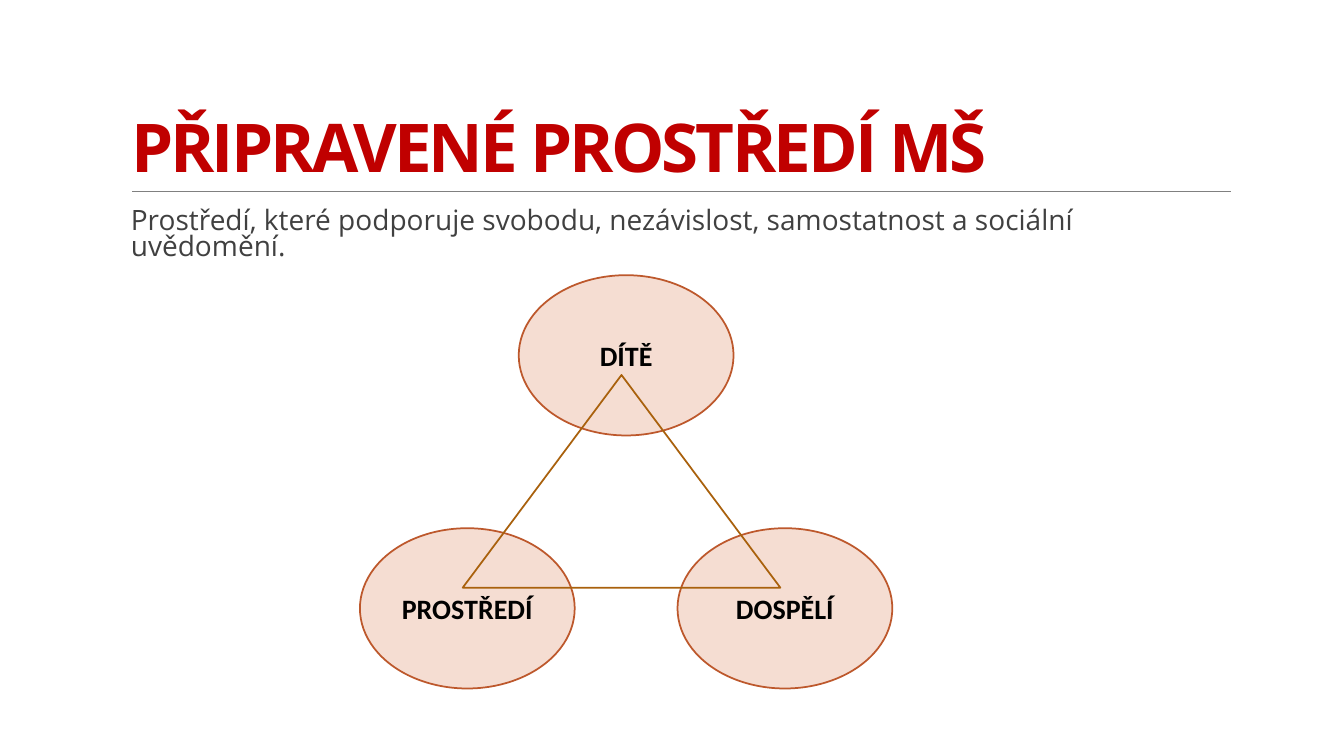
from dataclasses import dataclass

from pptx import Presentation
from pptx.dml.color import RGBColor
from pptx.enum.shapes import MSO_CONNECTOR as Link, MSO_SHAPE as Form
from pptx.enum.text import MSO_ANCHOR as Anchor, MSO_AUTO_SIZE as Fit, PP_ALIGN as Align
from pptx.oxml.ns import qn
from pptx.shapes.autoshape import Shape
from pptx.slide import Slide
from pptx.util import Inches, Pt

WIDTH, HEIGHT = Inches(13.33), Inches(7.5)
RED = RGBColor(0xC0, 0x00, 0x00)
GRAY = RGBColor(0x40, 0x40, 0x40)
RULE = RGBColor(0x80, 0x80, 0x80)
PEACH = RGBColor(0xF5, 0xDD, 0xD2)
RUST = RGBColor(0xBD, 0x58, 0x2C)
BROWN = RGBColor(0xA9, 0x61, 0x0D)
BLACK = RGBColor(0x00, 0x00, 0x00)


@dataclass(frozen=True)
class Area:
    left: float
    top: float
    width: float
    height: float

    def box(self) -> tuple[int, int, int, int]:
        return (col(self.left), row(self.top), col(self.width), row(self.height))


@dataclass(frozen=True)
class Node:
    label: str
    step: float
    level: int


TITLE = Area(9, 4.13, 82.52, 21.2)
BODY = Area(9, 26.93, 82.52, 58.67)
OVAL = Area(26.78, 36.4, 15.98, 21.2)
PEAK = Area(34.43, 49.6, 23.63, 28.13)
DROP = 33.47
NODES = (Node("PROSTŘEDÍ", 0, 1), Node("DOSPĚLÍ", 1, 1), Node("DÍTĚ", 0.5, 0))


def col(share: float) -> int:
    return round(WIDTH * share / 100)


def row(share: float) -> int:
    return round(HEIGHT * share / 100)


def write(shape: Shape, text: str, face: str, size: int, color: RGBColor,
          bold: bool, align: Align, anchor: Anchor) -> None:
    frame = shape.text_frame
    frame.word_wrap = True
    frame.auto_size = Fit.NONE
    frame.vertical_anchor = anchor
    frame.text = text
    para = frame.paragraphs[0]
    para.alignment = align
    font = para.font
    font.name, font.size, font.bold = face, Pt(size), bold
    font.color.rgb = color


def add_title(slide: Slide) -> None:
    title = slide.shapes.title
    title.left, title.top, title.width, title.height = TITLE.box()
    write(title, "PŘIPRAVENÉ PROSTŘEDÍ MŠ", "Open Sans", 48, RED, True, Align.LEFT, Anchor.BOTTOM)
    para = title.text_frame.paragraphs[0]
    para.line_spacing = 0.85
    para.runs[0].font._element.set("spc", "-200")


def add_rule(slide: Slide) -> None:
    level = row(25.33)
    rule = slide.shapes.add_connector(Link.STRAIGHT, col(9.83), level, col(91.6), level)
    rule.line.color.rgb = RULE
    rule.line.width = Pt(0.5)
    props = rule._element.spPr
    props.append(props.makeelement(qn("a:effectLst"), {}))


def add_body(slide: Slide) -> None:
    body = slide.shapes.add_textbox(*BODY.box())
    text = "Prostředí, které podporuje svobodu, nezávislost, samostatnost a sociální uvědomění."
    write(body, text, "Open Sans", 20, GRAY, False, Align.LEFT, Anchor.TOP)
    frame = body.text_frame
    frame.margin_left, frame.margin_right = Inches(0.1), 0
    frame.paragraphs[0].line_spacing = 0.8


def add_form(slide: Slide, form: Form, area: Area, color: RGBColor) -> Shape:
    shape = slide.shapes.add_shape(form, *area.box())
    shape.shadow.inherit = False
    shape.fill.background()
    shape.line.color.rgb = color
    shape.line.width = Pt(1.25)
    return shape


def add_node(slide: Slide, node: Node) -> None:
    area = Area(OVAL.left + node.step * PEAK.width, OVAL.top + node.level * DROP,
                OVAL.width, OVAL.height)
    oval = add_form(slide, Form.OVAL, area, RUST)
    oval.fill.solid()
    oval.fill.fore_color.rgb = PEACH
    write(oval, node.label, "Calibri", 20, BLACK, True, Align.CENTER, Anchor.MIDDLE)


def main() -> None:
    deck = Presentation()
    deck.slide_width, deck.slide_height = WIDTH, HEIGHT
    slide = deck.slides.add_slide(deck.slide_layouts.get_by_name("Title Only"))
    add_title(slide)
    add_rule(slide)
    add_body(slide)
    for node in NODES:
        add_node(slide, node)
    add_form(slide, Form.ISOSCELES_TRIANGLE, PEAK, BROWN)
    deck.save("out.pptx")


if __name__ == "__main__":
    main()
